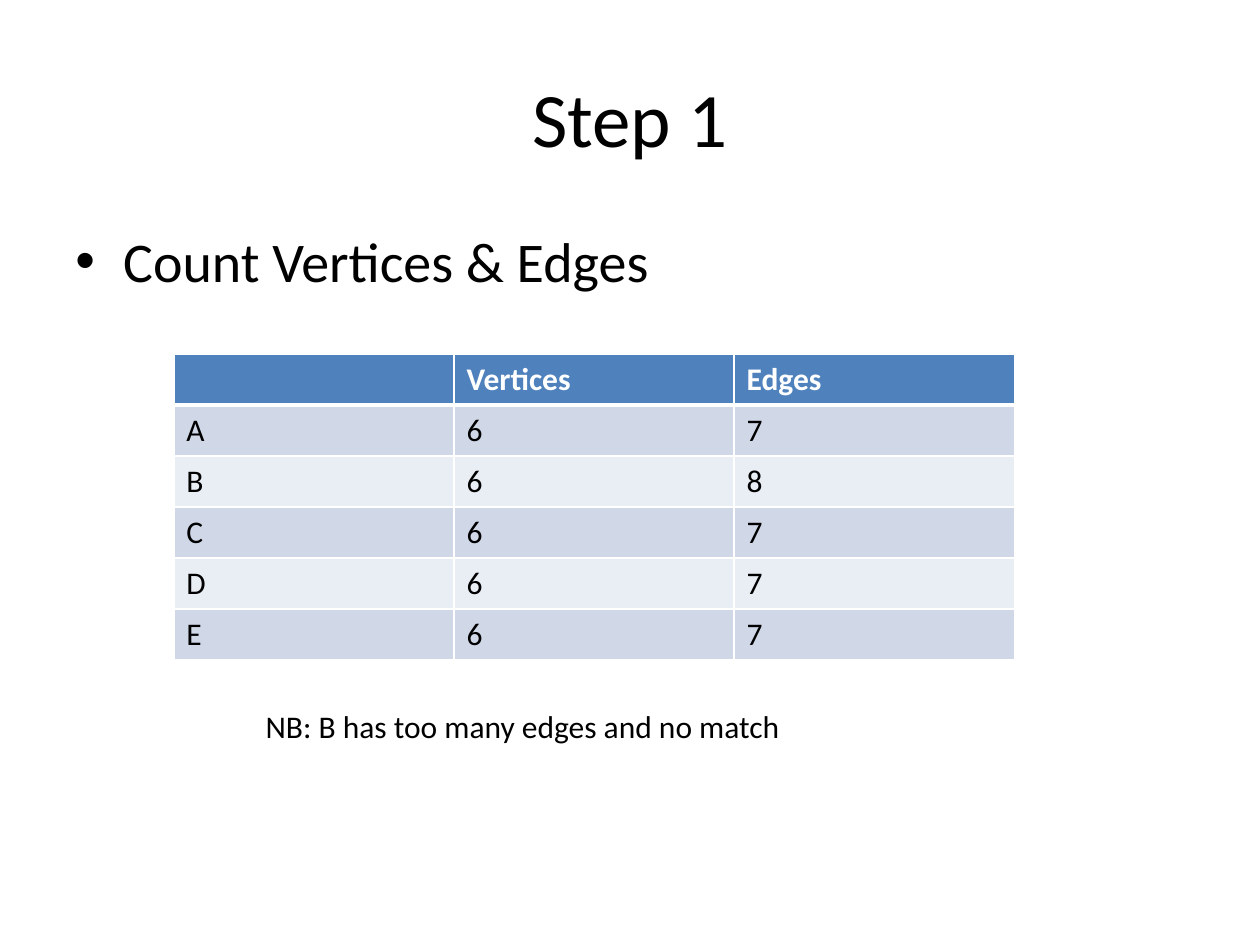
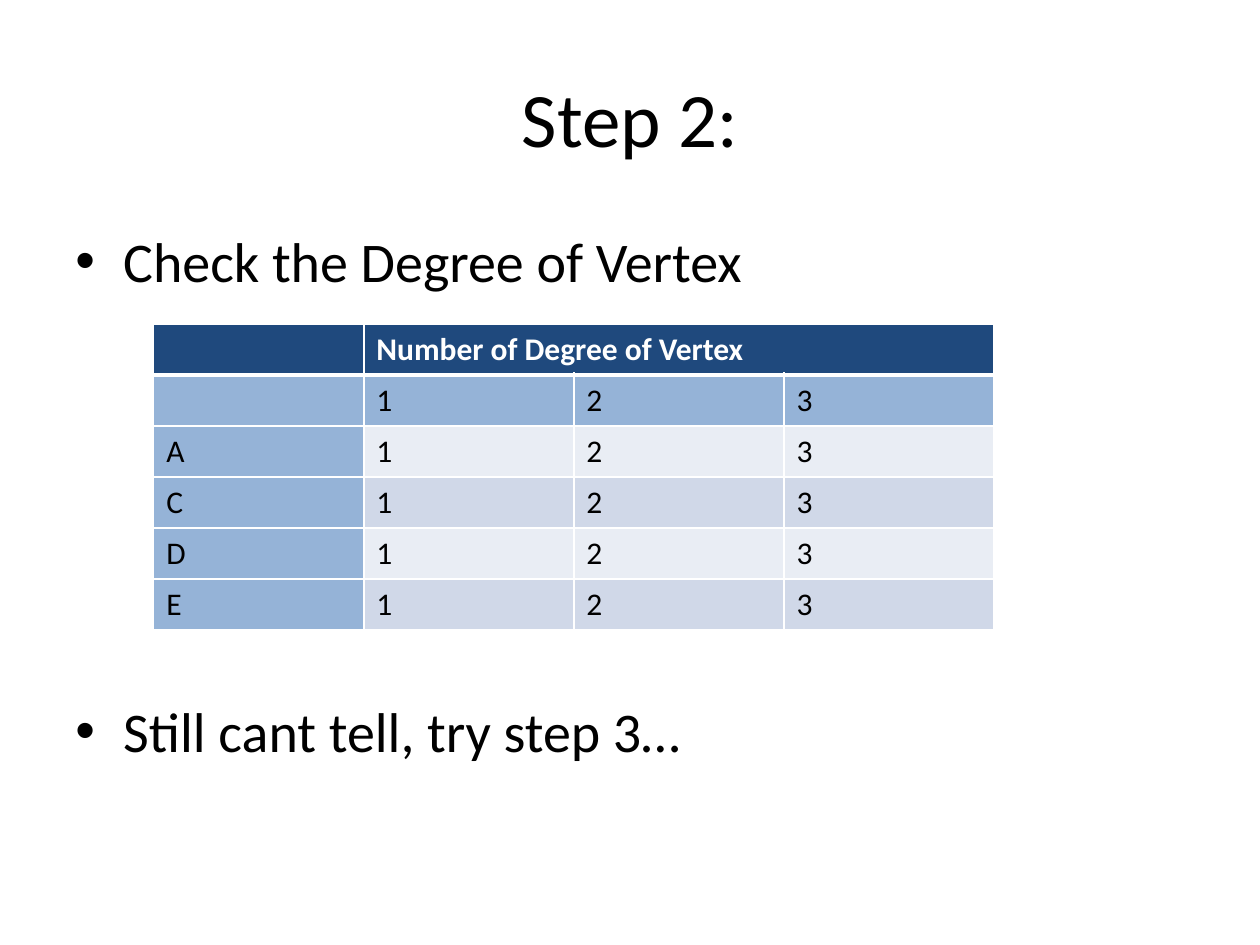
from pptx import Presentation
from pptx.dml.color import RGBColor as Rgb
from pptx.enum.text import MSO_ANCHOR as Anchor, PP_ALIGN as Align
from pptx.oxml.ns import qn
from pptx.util import Inches, Pt
from lxml.etree import SubElement

COLORS = {
    "text": "000000",
    "white": "FFFFFF",
    "blue": "4F81BD",
    "navy": "1F497D",
    "label": "95B3D7",
    "band_dark": "D0D8E8",
    "band_light": "E9EDF4",
}
FONT = "Calibri"
BULLET_INDENT = Inches(0.38)
BORDER_SIDES = ("a:lnL", "a:lnR", "a:lnT", "a:lnB")


def write(frame, text, size=18, color="text", bold=False, align=Align.LEFT,
          bullet=False, before=0, new=False):
    """Write one paragraph into a text frame."""
    para = frame.add_paragraph() if new else frame.paragraphs[0]
    para.alignment = align
    para.space_before = Pt(before)
    if bullet:
        props = para._p.get_or_add_pPr()
        props.set("marL", str(BULLET_INDENT))
        props.set("indent", str(-BULLET_INDENT))
        SubElement(props, qn("a:buFont"), typeface="Arial")
        SubElement(props, qn("a:buChar"), char="•")
    span = para.add_run()
    span.text = text
    span.font.name = FONT
    span.font.size = Pt(size)
    span.font.bold = bold
    span.font.color.rgb = Rgb.from_string(COLORS[color])


def add_box(page, left, top, width, height, anchor=Anchor.TOP):
    """Add a wrapping text box and return its text frame."""
    box = page.shapes.add_textbox(Inches(left), Inches(top), Inches(width), Inches(height))
    box.text_frame.word_wrap = True
    box.text_frame.vertical_anchor = anchor
    return box.text_frame


deck = Presentation()
deck.slide_width, deck.slide_height = Inches(10), Inches(7.5)

# Bullets carry their space before in points
steps = [
    {
        "title": "Step 1",
        "bullets": [("Count Vertices & Edges", 6.4)],
        "table_at": (1.38, 2.81),
        "header": "blue",
        "labels": False,
        "rows": [["", "Vertices", "Edges"]]
        + [[graph, "6", "8" if graph == "B" else "7"] for graph in "ABCDE"],
        "note": "NB: B has too many edges and no match",
    },
    {
        "title": "Step 2:",
        "bullets": [("Check the Degree of Vertex", 6.4), ("Still cant tell, try step 3…", 230)],
        "table_at": (1.22, 2.57),
        "header": "navy",
        "labels": True,
        "rows": [["", "Number of Degree of Vertex", "", ""]]
        + [[graph, "1", "2", "3"] for graph in ("", "A", "C", "D", "E")],
        "note": None,
    },
]

for step in steps:
    page = deck.slides.add_slide(deck.slide_layouts[6])

    # Title and bullets
    title = add_box(page, 0.5, 0.3, 9, 1.25, Anchor.MIDDLE)
    write(title, step["title"], size=44, align=Align.CENTER)
    body = add_box(page, 0.5, 1.75, 9, 4.95)
    for index, (text, before) in enumerate(step["bullets"]):
        write(body, text, size=32, bullet=True, before=before, new=index > 0)

    # Table with equal rows and columns
    rows = step["rows"]
    left, top = step["table_at"]
    table = page.shapes.add_table(len(rows), len(rows[0]), Inches(left), Inches(top),
                                  Inches(6.67), Inches(2.43)).table
    for r, row in enumerate(rows):
        for c, text in enumerate(row):
            cell = table.cell(r, c)
            if r == 0:
                fill = step["header"]
            elif step["labels"] and (r == 1 or c == 0):
                fill = "label"
            else:
                fill = "band_dark" if r % 2 else "band_light"

            # White grid, heavier under the header
            cell_props = cell._tc.get_or_add_tcPr()
            for side in BORDER_SIDES:
                heavy = (r == 0 and side == "a:lnB") or (r == 1 and side == "a:lnT")
                line = SubElement(cell_props, qn(side), w=str(Pt(3 if heavy else 1)))
                solid = SubElement(line, qn("a:solidFill"))
                SubElement(solid, qn("a:srgbClr"), val=COLORS["white"])
            cell.fill.solid()
            cell.fill.fore_color.rgb = Rgb.from_string(COLORS[fill])
            if text:
                write(cell.text_frame, text, color="white" if r == 0 else "text", bold=r == 0)

    # The degree heading spans all value columns
    if step["labels"]:
        table.cell(0, 1).merge(table.cell(0, len(rows[0]) - 1))

    # Remark below the table
    if step["note"]:
        write(add_box(page, 2.01, 5.56, 4.88, 0.4), step["note"])

deck.save("out.pptx")
